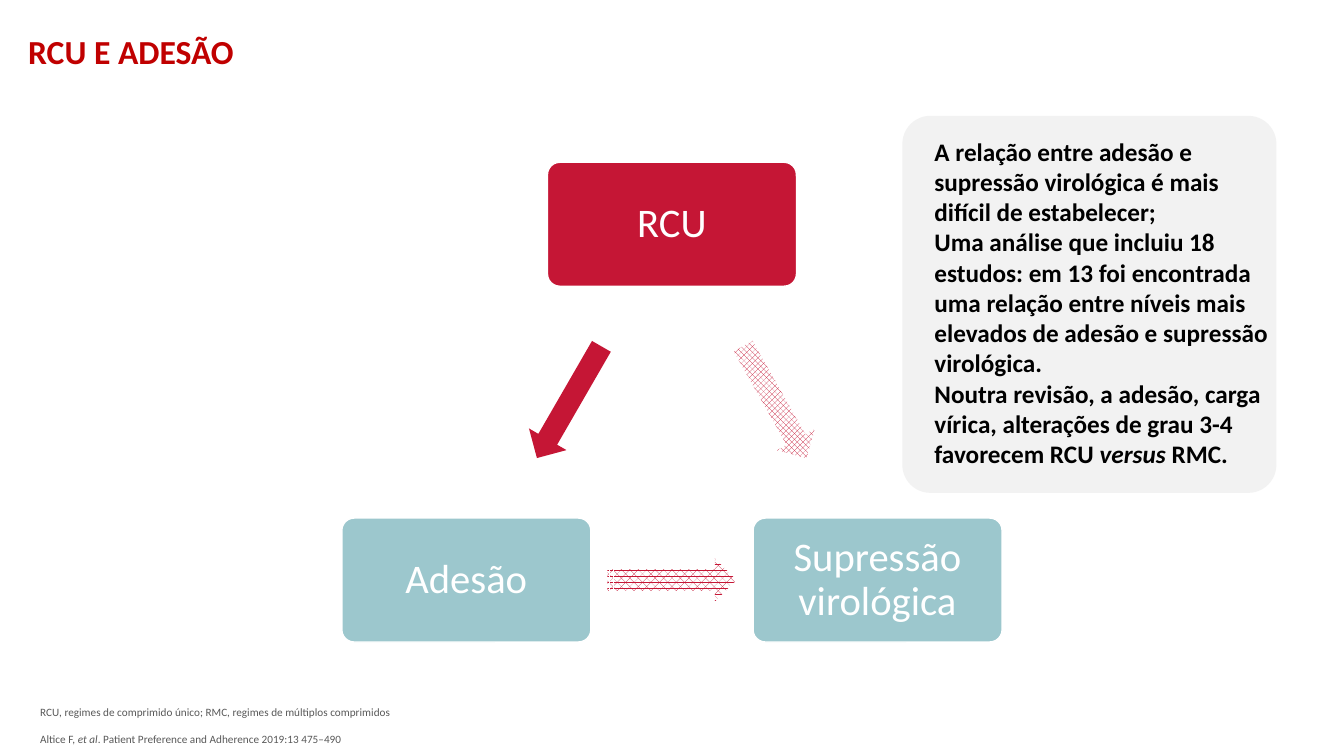
from dataclasses import dataclass
from typing import NamedTuple

from pptx import Presentation
from pptx.dml.color import RGBColor
from pptx.enum.dml import MSO_PATTERN
from pptx.enum.shapes import MSO_SHAPE
from pptx.enum.text import MSO_ANCHOR, PP_ALIGN
from pptx.util import Inches, Pt

WHITE = RGBColor(0xFF, 0xFF, 0xFF)
BLACK = RGBColor(0x00, 0x00, 0x00)
RED = RGBColor(0xC5, 0x16, 0x35)
TEAL = RGBColor(0x9C, 0xC7, 0xCD)
PALE = RGBColor(0xF2, 0xF2, 0xF2)
GREY = RGBColor(0x59, 0x59, 0x59)
TITLE = RGBColor(0xC0, 0x00, 0x00)

WIDE, HIGH = Inches(13.33), Inches(7.5)


class Area(NamedTuple):
    """Place and size in percent of the slide's width and height."""
    left: float
    top: float
    width: float
    height: float

    def emu(self) -> list[int]:
        return [round(part * full / 100) for part, full in zip(self, (WIDE, HIGH) * 2)]


class Spot(NamedTuple):
    x: float
    y: float

    def area(self, width: float, height: float) -> Area:
        """Area of the given size centred on this spot."""
        return Area(self.x - width / 2, self.y - height / 2, width, height)


@dataclass
class Node:
    label: str
    spot: Spot
    color: RGBColor


@dataclass
class Arrow:
    start: Node
    end: Node
    kind: MSO_SHAPE
    turn: float = 0
    weave: MSO_PATTERN | None = None


@dataclass
class Note:
    """Text box; each paragraph is a list of runs, every second run italic."""
    area: Area
    lines: list[list[str]]
    font: dict
    gap: float = 0


MID, SIDE, UPPER, LOWER = 50, 15.3, 29.67, 76.73
BOX = (18.53, 16.4)
DART = (9.6, 5.73)

PILL = Node("RCU", Spot(MID, UPPER), RED)
GOAL = Node("Supressão virológica", Spot(MID + SIDE, LOWER), TEAL)
HABIT = Node("Adesão", Spot(MID - SIDE, LOWER), TEAL)
NODES = [PILL, GOAL, HABIT]

ARROWS = [
    Arrow(PILL, GOAL, MSO_SHAPE.LEFT_ARROW, 240.5, MSO_PATTERN.OUTLINED_DIAMOND),
    Arrow(HABIT, GOAL, MSO_SHAPE.STRIPED_RIGHT_ARROW, 0, MSO_PATTERN.PERCENT_60),
    Arrow(PILL, HABIT, MSO_SHAPE.LEFT_ARROW, 300),
]

PANEL = Area(67.14, 15.33, 27.83, 49.87)

NOTES = [
    Note(Area(1.35, 3.47, 81.85, 6.67), [["RCU E ADESÃO"]],
         {"size": Pt(24), "bold": True, "color": TITLE}),
    Note(Area(68.79, 17.33, 26.71, 45.73), [
        ["A relação entre adesão e supressão virológica é mais difícil de estabelecer;"],
        ["Uma análise que incluiu 18 estudos: em 13 foi encontrada uma relação "
         "entre níveis mais elevados de adesão e supressão virológica."],
        ["Noutra revisão, a adesão, carga vírica, alterações de grau 3-4 favorecem RCU ",
         "versus", " RMC."],
    ], {"size": Pt(18), "bold": True, "color": BLACK}),
    Note(Area(2.25, 92.67, 57.76, 6.67), [
        ["RCU, regimes de comprimido único; RMC, regimes de múltiplos comprimidos"],
        ["Altice F, ", "et al", ". Patient Preference and Adherence 2019:13 475–490"],
    ], {"size": Pt(8), "color": GREY}, gap=9.8),
]


def style(item, **form) -> None:
    """Set each format value; a colour goes to the item's colour object."""
    for name, value in form.items():
        if name == "color":
            item.color.rgb = value
        else:
            setattr(item, name, value)


def add_form(slide, kind: MSO_SHAPE, area: Area, color: RGBColor):
    form = slide.shapes.add_shape(kind, *area.emu())
    form.shadow.inherit = False
    form.fill.solid()
    form.fill.fore_color.rgb = color
    form.line.fill.background()
    return form


def add_node(slide, node: Node) -> None:
    box = add_form(slide, MSO_SHAPE.ROUNDED_RECTANGLE, node.spot.area(*BOX), node.color)
    box.adjustments[0] = 0.1
    style(box.line, color=WHITE, width=Pt(1))
    frame = box.text_frame
    pad = Inches(0.12)
    style(frame, word_wrap=True, vertical_anchor=MSO_ANCHOR.MIDDLE, margin_left=pad,
          margin_right=pad, margin_top=pad, margin_bottom=pad)
    para = frame.paragraphs[0]
    style(para, alignment=PP_ALIGN.CENTER, line_spacing=0.9)
    run = para.add_run()
    run.text = node.label
    style(run.font, name="Calibri", size=Pt(29), color=WHITE)


def add_arrow(slide, arrow: Arrow) -> None:
    """Draw the arrow halfway between its two nodes."""
    ends = zip(arrow.start.spot, arrow.end.spot)
    spot = Spot(*(sum(pair) / 2 for pair in ends))
    dart = add_form(slide, arrow.kind, spot.area(*DART), RED)
    dart.rotation = arrow.turn
    if arrow.weave is not None:
        dart.fill.patterned()
        dart.fill.pattern = arrow.weave
        dart.fill.fore_color.rgb = RED
        dart.fill.back_color.rgb = WHITE


def add_note(slide, note: Note) -> None:
    frame = slide.shapes.add_textbox(*note.area.emu()).text_frame
    frame.word_wrap = True
    for row, line in enumerate(note.lines):
        para = frame.add_paragraph() if row else frame.paragraphs[0]
        if row and note.gap:
            para.space_before = Pt(note.gap)
        for spot, text in enumerate(line):
            run = para.add_run()
            run.text = text
            style(run.font, name="Calibri", italic=spot % 2 == 1, **note.font)


def main() -> None:
    deck = Presentation()
    style(deck, slide_width=WIDE, slide_height=HIGH)
    slide = deck.slides.add_slide(deck.slide_layouts[6])
    for node in NODES:
        add_node(slide, node)
    for arrow in ARROWS:
        add_arrow(slide, arrow)
    panel = add_form(slide, MSO_SHAPE.ROUNDED_RECTANGLE, PANEL, PALE)
    panel.adjustments[0] = 0.075
    for note in NOTES:
        add_note(slide, note)
    deck.save("out.pptx")


if __name__ == "__main__":
    main()
